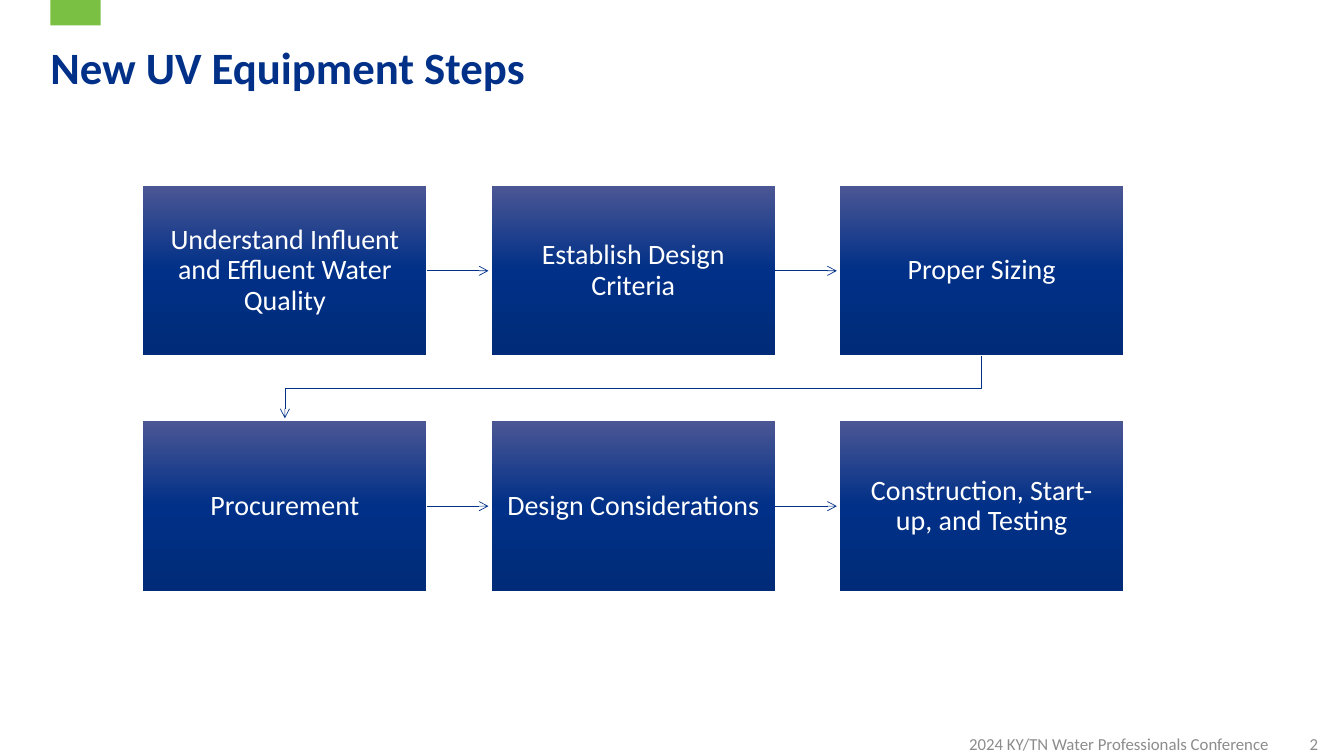
from copy import deepcopy

from pptx import Presentation
from pptx.dml.color import RGBColor
from pptx.enum.shapes import MSO_CONNECTOR, MSO_SHAPE
from pptx.enum.text import MSO_ANCHOR, MSO_AUTO_SIZE, PP_ALIGN
from pptx.oxml.ns import qn
from pptx.util import Cm, Pt

RECT, STRAIGHT = MSO_SHAPE.RECTANGLE, MSO_CONNECTOR.STRAIGHT
TOP, MIDDLE = MSO_ANCHOR.TOP, MSO_ANCHOR.MIDDLE
LEFT, CENTER, RIGHT = PP_ALIGN.LEFT, PP_ALIGN.CENTER, PP_ALIGN.RIGHT
NO_FIT = MSO_AUTO_SIZE.NONE
TITLE_ONLY = 5
RIGHT_SIDE = 3

COLORS = {
    "navy": "003087",
    "navy_light": "4B5694",
    "navy_dark": "002B78",
    "green": "7AC143",
    "gray": "8C8C8C",
    "white": "FFFFFF",
}
GRADIENT = [(0, "navy_light"), (0.5, "navy"), (1, "navy_dark")]

# Step grid, in cm
GRID_X, GRID_Y = 3.61, 4.69
BOX_W, BOX_H = 7.14, 4.27
STEP_X, STEP_Y = 8.78, 5.93
ARROW_GAP = 0.08
STEPS = [
    ["Understand Influent and Effluent Water Quality",
     "Establish Design Criteria", "Proper Sizing"],
    ["Procurement", "Design Considerations",
     "Construction, Start-up, and Testing"],
]


def rgb(name):
    return RGBColor.from_string(COLORS[name])


class SlideBuilder:
    font = "Calibri"
    line_width = Pt(0.5)

    def __init__(self, prs):
        self.slide = prs.slides.add_slide(prs.slide_layouts[TITLE_ONLY])
        self.shapes = self.slide.shapes

    def set_text(self, sp, text, size, color, align, anchor=MIDDLE,
                 margins=(0, 0, 0, 0), bold=False, spacing=1.0):
        tf = sp.text_frame
        left, top, right, bottom = map(Cm, margins)
        frame = {"word_wrap": True, "auto_size": NO_FIT,
                 "vertical_anchor": anchor, "margin_left": left,
                 "margin_top": top, "margin_right": right,
                 "margin_bottom": bottom}
        for name, value in frame.items():
            setattr(tf, name, value)
        p = tf.paragraphs[0]
        p.alignment, p.line_spacing = align, spacing
        r = p.add_run()
        r.text = text
        for name, value in {"name": self.font, "size": Pt(size),
                            "bold": bold}.items():
            setattr(r.font, name, value)
        r.font.color.rgb = rgb(color)

    def title(self, text, x, y, w, h):
        sp = self.shapes.title
        sp.left, sp.top, sp.width, sp.height = map(Cm, (x, y, w, h))
        self.set_text(sp, text, 32, "navy", LEFT, TOP, (0, 0.51, 0, 0),
                      bold=True, spacing=0.9)

    def label(self, text, x, y, w, h):
        sp = self.shapes.add_textbox(*map(Cm, (x, y, w, h)))
        self.set_text(sp, text, 12, "gray", RIGHT)

    def rect(self, x, y, w, h):
        sp = self.shapes.add_shape(RECT, *map(Cm, (x, y, w, h)))
        sp.shadow.inherit = False
        sp.line.fill.background()
        return sp

    def tab(self, x, y, w, h):
        sp = self.rect(x, y, w, h)
        sp.fill.solid()
        sp.fill.fore_color.rgb = rgb("green")

    def step(self, text, x, y):
        sp = self.rect(x, y, BOX_W, BOX_H)
        sp.fill.gradient()
        sp.fill.gradient_angle = 270
        # The default gradient has two stops; add the third
        gs = next(sp._element.spPr.iter(qn("a:gs")))
        gs.addnext(deepcopy(gs))
        for stop, (position, color) in zip(sp.fill.gradient_stops, GRADIENT):
            stop.position = position
            stop.color.rgb = rgb(color)
        self.set_text(sp, text, 20, "white", CENTER, margins=(0.36,) * 4,
                      spacing=0.9)
        return sp

    def arrow_line(self, sp):
        sp.line.color.rgb = rgb("navy")
        sp.line.width = self.line_width
        ln = sp._element.spPr.find(qn("a:ln"))
        ln.append(ln.makeelement(qn("a:tailEnd"), {"type": "arrow"}))

    def arrow(self, box, target):
        y = box.top + box.height // 2
        c = self.shapes.add_connector(
            STRAIGHT, box.left + box.width, y, target.left - Cm(ARROW_GAP), y)
        c.begin_connect(box, RIGHT_SIDE)
        self.arrow_line(c)
        spPr = c._element.spPr
        spPr.append(spPr.makeelement(qn("a:effectLst"), {}))

    def return_arrow(self, box, target):
        x1 = box.left + box.width // 2
        x2 = target.left + target.width // 2
        y1 = box.top + box.height
        mid = (y1 + target.top) // 2
        fb = self.shapes.build_freeform(x1, y1)
        fb.add_line_segments(
            [(x1, mid), (x2, mid), (x2, target.top - Cm(ARROW_GAP))],
            close=False)
        sp = fb.convert_to_shape()
        sp.fill.background()
        self.arrow_line(sp)
        sp.shadow.inherit = False


def main():
    prs = Presentation()
    prs.slide_width, prs.slide_height = Cm(33.87), Cm(19.05)
    s = SlideBuilder(prs)

    # Title and footer
    s.tab(1.27, 0, 1.27, 0.64)
    s.title("New UV Equipment Steps", 1.27, 0.64, 31.95, 2.92)
    s.label("2024 KY/TN Water Professionals Conference",
            17.58, 18.42, 14.4, 0.63)
    s.label("2", 31.95, 18.42, 1.27, 0.63)

    # Step boxes
    rows = [[s.step(text, GRID_X + col * STEP_X, GRID_Y + row * STEP_Y)
             for col, text in enumerate(texts)]
            for row, texts in enumerate(STEPS)]

    # Arrows along each row, then back to the start of the next
    for boxes in rows:
        for box, target in zip(boxes, boxes[1:]):
            s.arrow(box, target)
    s.return_arrow(rows[0][-1], rows[1][0])

    prs.save("out.pptx")


if __name__ == "__main__":
    main()
